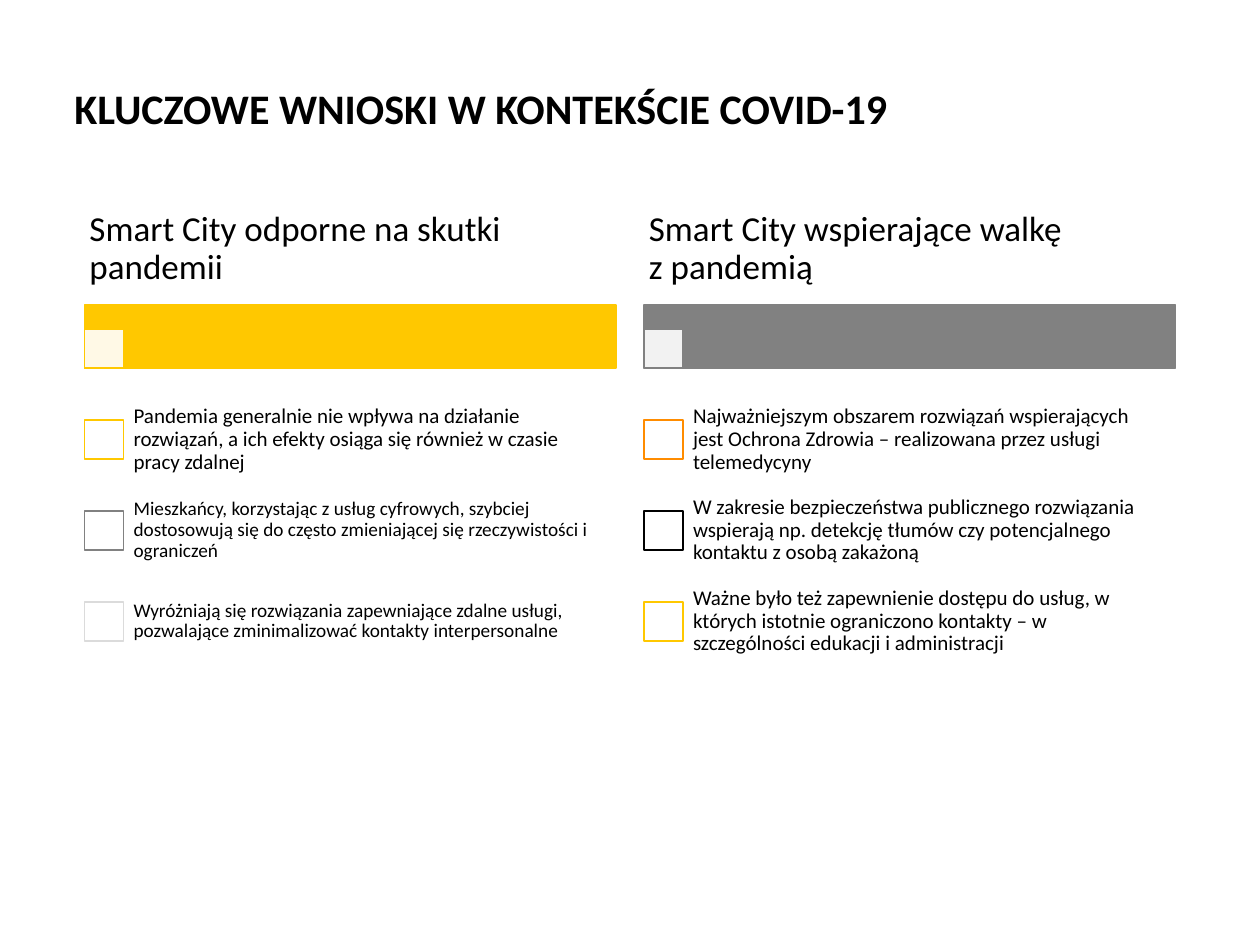
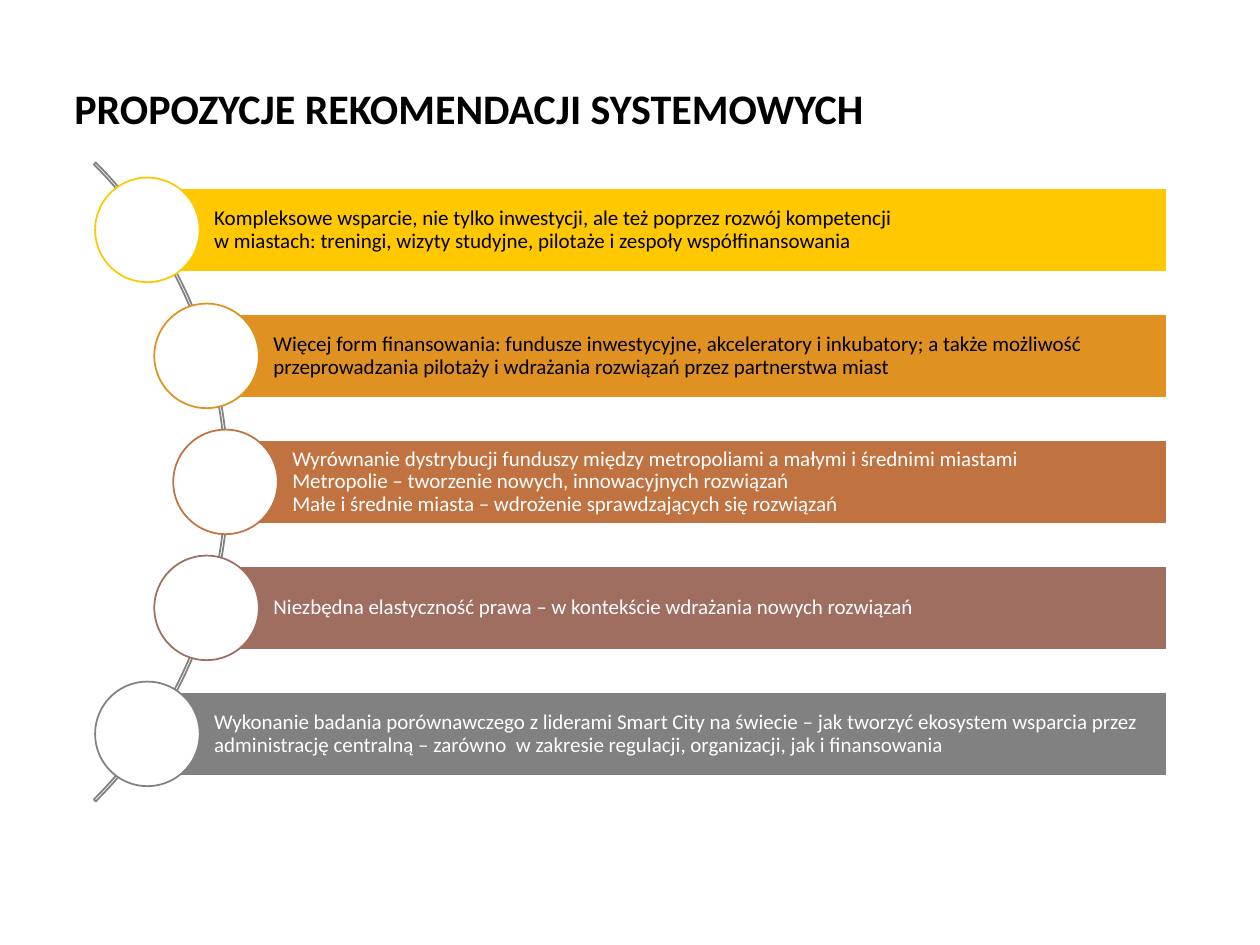
import pptx
import pptx.util
import pptx.dml.color
import pptx.enum.shapes
import pptx.enum.text
from lxml import etree

Inches = pptx.util.Inches
SHAPES = pptx.enum.shapes.MSO_SHAPE
ANCHOR = pptx.enum.text.MSO_ANCHOR

FONT = "Calibri"
BLACK = "000000"
WHITE = "FFFFFF"
YELLOW = "FFC800"
GRAY = "818181"
LIGHT_GRAY = "DBDBDB"
ORANGE = "FF8C00"

COLUMN_WIDTH = 4.22
HEADING_TOP = 1.53
HEADING_HEIGHT = 0.89
COLUMN_BAR_TOP = 2.42
COLUMN_BAR_HEIGHT = 0.5
MARKER_SIZE = 0.31
FIRST_POINT_TOP = 3.13
POINT_HEIGHT = 0.72
POINT_INDENT = 0.3

BAR_RIGHT = 9.26
BAR_HEIGHT = 0.67
FIRST_BAR_TOP = 1.49
BAR_STEP = 1.0
CIRCLE_SIZE = 0.83

COLUMNS = [
    (0.67, YELLOW, "Smart City odporne na skutki pandemii", [
        (YELLOW, 12, "Pandemia generalnie nie wpływa na działanie rozwiązań, a ich efekty "
                     "osiąga się również w czasie pracy zdalnej"),
        (GRAY, 11, "Mieszkańcy, korzystając z usług cyfrowych, szybciej dostosowują się "
                   "do często zmieniającej się rzeczywistości i ograniczeń"),
        (LIGHT_GRAY, 11, "Wyróżniają się rozwiązania zapewniające zdalne usługi, "
                         "pozwalające zminimalizować kontakty interpersonalne"),
    ]),
    (5.11, GRAY, "Smart City wspierające walkę \vz pandemią", [
        (ORANGE, 12, "Najważniejszym obszarem rozwiązań wspierających jest Ochrona Zdrowia "
                     "– realizowana przez usługi telemedycyny"),
        (BLACK, 12, "W zakresie bezpieczeństwa publicznego rozwiązania wspierają np. detekcję "
                    "tłumów czy potencjalnego kontaktu z osobą zakażoną"),
        (YELLOW, 12, "Ważne było też zapewnienie dostępu do usług, w których istotnie "
                     "ograniczono kontakty – w szczególności edukacji i administracji"),
    ]),
]

RECOMMENDATIONS = [
    (1.17, YELLOW, BLACK,
     "Kompleksowe wsparcie, nie tylko inwestycji, ale też poprzez rozwój kompetencji \v"
     "w miastach: treningi, wizyty studyjne, pilotaże i zespoły współfinansowania"),
    (1.64, "DF9121", BLACK,
     "Więcej form finansowania: fundusze inwestycyjne, akceleratory i inkubatory; a także "
     "możliwość przeprowadzania pilotaży i wdrażania rozwiązań przez partnerstwa miast"),
    (1.79, "C07341", WHITE,
     "Wyrównanie dystrybucji funduszy między metropoliami a małymi i średnimi miastami\v"
     "Metropolie – tworzenie nowych, innowacyjnych rozwiązań\v"
     "Małe i średnie miasta – wdrożenie sprawdzających się rozwiązań"),
    (1.64, "A06D61", WHITE,
     "Niezbędna elastyczność prawa – w kontekście wdrażania nowych rozwiązań"),
    (1.17, GRAY, WHITE,
     "Wykonanie badania porównawczego z liderami Smart City na świecie – jak tworzyć "
     "ekosystem wsparcia przez administrację centralną – zarówno  w zakresie regulacji, "
     "organizacji, jak i finansowania"),
]


def color(hex_value):
    return pptx.dml.color.RGBColor.from_string(hex_value)


def write_text(shape, text, size, text_color=BLACK, insets=(0.1, 0.05, 0.1, 0.05),
               anchor=ANCHOR.MIDDLE, line_spacing=0.9, bold=False):
    frame = shape.text_frame
    frame.text = text
    frame.word_wrap = True
    frame.auto_size = pptx.enum.text.MSO_AUTO_SIZE.NONE
    frame.vertical_anchor = anchor
    frame.margin_left, frame.margin_top, frame.margin_right, frame.margin_bottom = map(Inches, insets)
    for paragraph in frame.paragraphs:
        paragraph.alignment = pptx.enum.text.PP_ALIGN.LEFT
        paragraph.line_spacing = line_spacing
        for run in paragraph.runs:
            run.font.name = FONT
            run.font.size = pptx.util.Pt(size)
            run.font.bold = bold
            run.font.color.rgb = color(text_color)


def add_title_slide(presentation, title):
    slide = presentation.slides.add_slide(presentation.slide_layouts[5])
    shape = slide.shapes.title
    shape.left, shape.top, shape.width, shape.height = map(Inches, (0.49, 0.55, 9.24, 0.51))
    write_text(shape, title, 24, anchor=ANCHOR.TOP, line_spacing=1.13, bold=True)
    return slide


def add_figure(slide, kind, left, top, width, height, fill, line):
    shape = slide.shapes.add_shape(kind, *map(Inches, (left, top, width, height)))
    shape.shadow.inherit = False
    if fill:
        shape.fill.solid()
        shape.fill.fore_color.rgb = color(fill)
    else:
        shape.fill.background()
    shape.line.color.rgb = color(line)
    shape.line.width = pptx.util.Pt(1)
    return shape


def add_marker(slide, left, top, line):
    return add_figure(slide, SHAPES.RECTANGLE, left, top, MARKER_SIZE, MARKER_SIZE, WHITE, line)


def add_label(slide, left, top, width, height, text, size, insets):
    box = slide.shapes.add_textbox(*map(Inches, (left, top, width, height)))
    write_text(box, text, size, insets=insets)


def set_opacity(shape, percent):
    solid_fill = shape.fill._xPr.find(pptx.oxml.ns.qn("a:solidFill"))
    etree.SubElement(solid_fill[0], pptx.oxml.ns.qn("a:alpha"), val=str(percent * 1000))


def add_column(slide, left, bar_color, heading, points):
    add_figure(slide, SHAPES.RECTANGLE, left, COLUMN_BAR_TOP, COLUMN_WIDTH, COLUMN_BAR_HEIGHT,
               bar_color, bar_color)
    marker_top = COLUMN_BAR_TOP + COLUMN_BAR_HEIGHT - MARKER_SIZE
    set_opacity(add_marker(slide, left, marker_top, bar_color), 90)
    add_label(slide, left, HEADING_TOP, COLUMN_WIDTH, HEADING_HEIGHT, heading, 20,
              (0.04, 0.03, 0.04, 0.03))
    for index, (line, size, text) in enumerate(points):
        top = FIRST_POINT_TOP + index * POINT_HEIGHT
        add_marker(slide, left, top + (POINT_HEIGHT - MARKER_SIZE) / 2, line)
        add_label(slide, left + POINT_INDENT, top, COLUMN_WIDTH - POINT_INDENT, POINT_HEIGHT,
                  text, size, (0.09,) * 4)


def add_arc(slide):
    arc = add_figure(slide, SHAPES.BLOCK_ARC, -5.36, 0.24, 7.17, 7.17, None, GRAY)
    for index, value in enumerate((189, 27, 0.003)):
        arc.adjustments[index] = value


def add_recommendation(slide, left, top, bar_color, text_color, text):
    bar = add_figure(slide, SHAPES.RECTANGLE, left, top, BAR_RIGHT - left, BAR_HEIGHT,
                     bar_color, WHITE)
    write_text(bar, text, 12, text_color, (0.53, 0.03, 0.03, 0.03))
    add_figure(slide, SHAPES.OVAL, left - CIRCLE_SIZE / 2, top - (CIRCLE_SIZE - BAR_HEIGHT) / 2,
               CIRCLE_SIZE, CIRCLE_SIZE, WHITE, bar_color)


def main():
    presentation = pptx.Presentation()
    presentation.slide_width = Inches(10)
    presentation.slide_height = Inches(7.5)

    slide = add_title_slide(presentation, "KLUCZOWE WNIOSKI W KONTEKŚCIE COVID-19")
    for column in COLUMNS:
        add_column(slide, *column)

    slide = add_title_slide(presentation, "PROPOZYCJE REKOMENDACJI SYSTEMOWYCH")
    add_arc(slide)
    for index, (left, *details) in enumerate(RECOMMENDATIONS):
        add_recommendation(slide, left, FIRST_BAR_TOP + index * BAR_STEP, *details)

    presentation.save("out.pptx")


if __name__ == "__main__":
    main()
